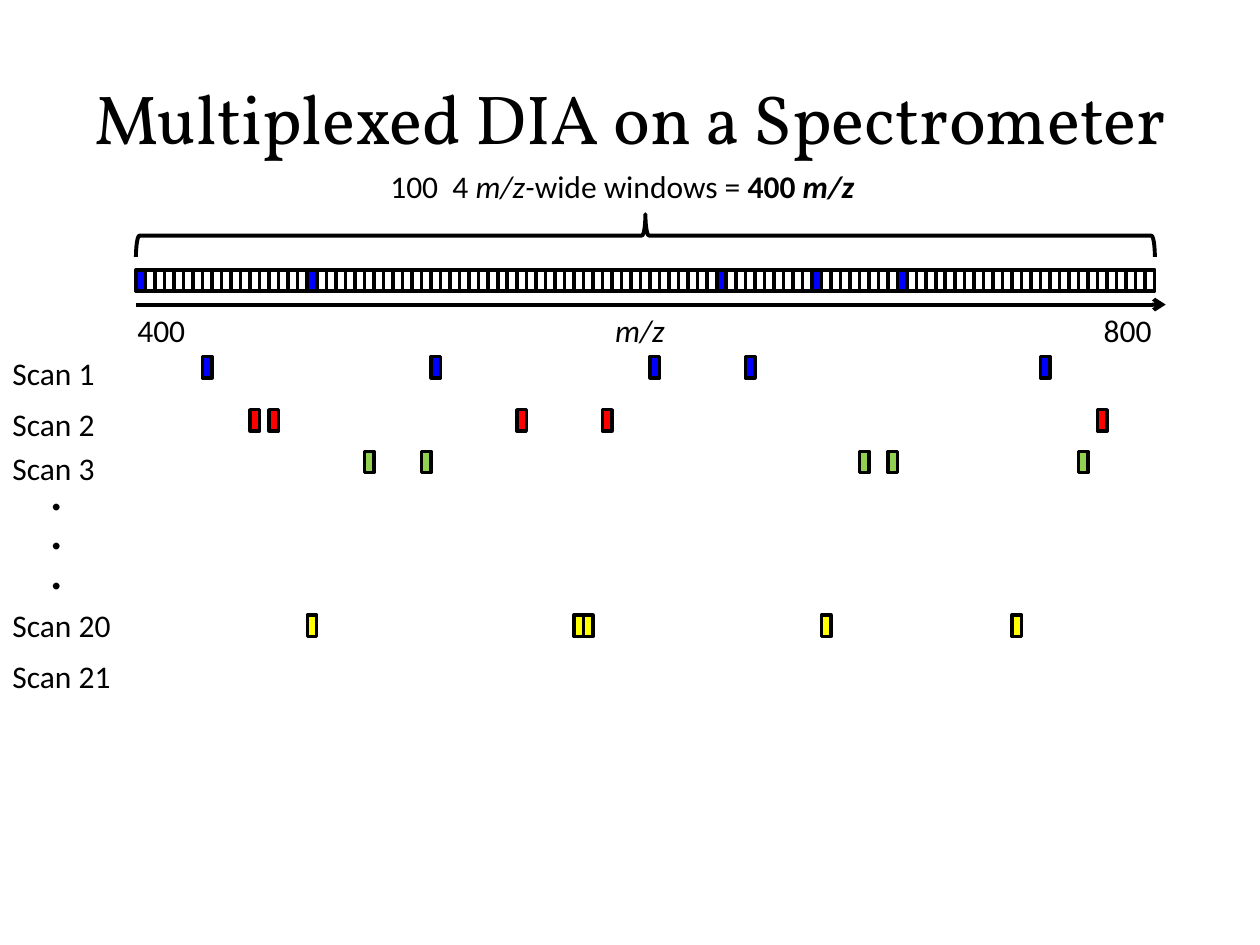
from dataclasses import dataclass

from lxml.etree import SubElement
from pptx import Presentation
from pptx.dml.color import RGBColor
from pptx.enum.shapes import MSO_CONNECTOR, MSO_SHAPE
from pptx.enum.text import MSO_ANCHOR, MSO_AUTO_SIZE, PP_ALIGN
from pptx.oxml.ns import qn
from pptx.shapes.autoshape import Shape
from pptx.slide import Slide
from pptx.text.text import TextFrame
from pptx.util import Cm, Pt


@dataclass(frozen=True)
class Theme:
    title_font: str = "Vollkorn"
    body_font: str = "Calibri"
    title_size: float = 39.6
    body_size: float = 18
    dots_size: float = 32
    window_line: float = 2
    axis_line: float = 2.25
    ink: str = "000000"
    empty: str = "FFFFFF"
    blue: str = "0000FF"
    red: str = "FF0000"
    green: str = "92D050"
    yellow: str = "FFFF00"


@dataclass(frozen=True)
class Words:
    text: str
    bold: bool = False
    italic: bool = False


@dataclass(frozen=True)
class Box:
    left: float
    top: float
    width: float
    height: float


@dataclass(frozen=True)
class Label:
    box: Box
    words: tuple[Words, ...]
    wrap: bool = False
    size: float = Theme.body_size
    rotation: float = 0


@dataclass(frozen=True)
class Scan:
    name: str
    label_top: float
    label_width: float
    windows_top: float = 0
    color: str = Theme.empty
    windows: tuple[int, ...] = ()


THEME = Theme()
WINDOW_COUNT = 107
BAND = Box(2.74, 5.44, 20.54, 0.43)
WINDOW_WIDTH = BAND.width / WINDOW_COUNT
BRACE_DEPTH = 0.86
BRACE_MIDDLE = 4.75
AXIS_TOP = 6.14
AXIS_END = 23.5
LABEL_HEIGHT = 1.03
ISOLATED_WINDOWS = (0, 18, 61, 71, 80)

SCANS = (
    Scan("Scan 1", 7.01, 2.21, 7.19, THEME.blue, (7, 31, 54, 64, 95)),
    Scan("Scan 2", 8.05, 2.21, 8.26, THEME.red, (12, 14, 40, 49, 101)),
    Scan("Scan 3", 8.92, 2.21, 9.1, THEME.green, (24, 30, 76, 79, 99)),
    Scan("Scan 20", 12.09, 2.51, 12.4, THEME.yellow, (18, 46, 47, 72, 92)),
    Scan("Scan 21", 13.13, 2.51),
)

LABELS = (
    Label(
        Box(7.62, 3.25, 10.64, LABEL_HEIGHT),
        (
            Words("100  4 "),
            Words("m/z-", italic=True),
            Words("wide windows = "),
            Words("400 ", bold=True),
            Words("m/z", bold=True, italic=True),
        ),
        wrap=True,
    ),
    Label(Box(2.52, AXIS_TOP, 1.5, LABEL_HEIGHT), (Words("400"),)),
    Label(Box(12.15, AXIS_TOP, 1.52, LABEL_HEIGHT), (Words("m/z", italic=True),)),
    Label(Box(22, AXIS_TOP, 1.5, LABEL_HEIGHT), (Words("800"),)),
    Label(
        Box(0.32, 10.22, 2.39, 1.63),
        (Words(".  .  ."),),
        size=THEME.dots_size,
        rotation=90,
    ),
)


def place(box: Box) -> tuple[Cm, Cm, Cm, Cm]:
    return Cm(box.left), Cm(box.top), Cm(box.width), Cm(box.height)


def write(frame: TextFrame, words: tuple[Words, ...], font: str, size: float) -> None:
    for part in words:
        run = frame.paragraphs[0].add_run()
        run.text = part.text
        run.font.name = font
        run.font.size = Pt(size)
        run.font.bold = part.bold
        run.font.italic = part.italic
        run.font.color.rgb = RGBColor.from_string(THEME.ink)


def draw_title(slide: Slide, text: str) -> None:
    title = slide.shapes.title
    title.left, title.top, title.width, title.height = place(Box(1.27, 0.76, 22.86, 3.18))
    frame = title.text_frame
    frame.auto_size = MSO_AUTO_SIZE.NONE
    frame.vertical_anchor = MSO_ANCHOR.MIDDLE
    frame.paragraphs[0].alignment = PP_ALIGN.CENTER
    write(frame, (Words(text),), THEME.title_font, THEME.title_size)


def draw_label(slide: Slide, label: Label) -> None:
    caption = slide.shapes.add_textbox(*place(label.box))
    caption.rotation = label.rotation
    frame = caption.text_frame
    frame.word_wrap = label.wrap
    frame.auto_size = MSO_AUTO_SIZE.SHAPE_TO_FIT_TEXT
    write(frame, label.words, THEME.body_font, label.size)


def draw_outlined(slide: Slide, kind: MSO_SHAPE, box: Box, line_width: float) -> Shape:
    outlined = slide.shapes.add_shape(kind, *place(box))
    outlined.shadow.inherit = False
    outlined.line.color.rgb = RGBColor.from_string(THEME.ink)
    outlined.line.width = Pt(line_width)
    return outlined


def draw_windows(slide: Slide, positions: tuple[int, ...], top: float, color: str) -> None:
    for position in positions:
        left = BAND.left + position * WINDOW_WIDTH
        box = Box(left, top, WINDOW_WIDTH, BAND.height)
        window = draw_outlined(slide, MSO_SHAPE.RECTANGLE, box, THEME.window_line)
        window.fill.solid()
        window.fill.fore_color.rgb = RGBColor.from_string(color)


def draw_brace(slide: Slide) -> None:
    box = Box(
        BAND.left + (BAND.width - BRACE_DEPTH) / 2,
        BRACE_MIDDLE - BAND.width / 2,
        BRACE_DEPTH,
        BAND.width,
    )
    brace = draw_outlined(slide, MSO_SHAPE.LEFT_BRACE, box, THEME.axis_line)
    brace.rotation = 90
    brace.fill.background()


def draw_axis(slide: Slide) -> None:
    axis = slide.shapes.add_connector(
        MSO_CONNECTOR.STRAIGHT, Cm(BAND.left), Cm(AXIS_TOP), Cm(AXIS_END), Cm(AXIS_TOP)
    )
    axis.line.color.rgb = RGBColor.from_string(THEME.ink)
    axis.line.width = Pt(THEME.axis_line)
    SubElement(axis.line._get_or_add_ln(), qn("a:tailEnd"), type="arrow")
    SubElement(axis._element.spPr, qn("a:effectLst"))


def main() -> None:
    deck = Presentation()
    deck.slide_width, deck.slide_height = Cm(25.4), Cm(19.05)
    slide = deck.slides.add_slide(deck.slide_layouts[5])
    draw_title(slide, "Multiplexed DIA on a Spectrometer")
    for scan in SCANS:
        draw_windows(slide, scan.windows, scan.windows_top, scan.color)
        name_box = Box(0, scan.label_top, scan.label_width, LABEL_HEIGHT)
        draw_label(slide, Label(name_box, (Words(scan.name),)))
    draw_brace(slide)
    draw_axis(slide)
    for label in LABELS:
        draw_label(slide, label)
    unselected = tuple(n for n in range(WINDOW_COUNT) if n not in ISOLATED_WINDOWS)
    draw_windows(slide, unselected, BAND.top, THEME.empty)
    draw_windows(slide, ISOLATED_WINDOWS, BAND.top, THEME.blue)
    deck.save("out.pptx")


if __name__ == "__main__":
    main()
